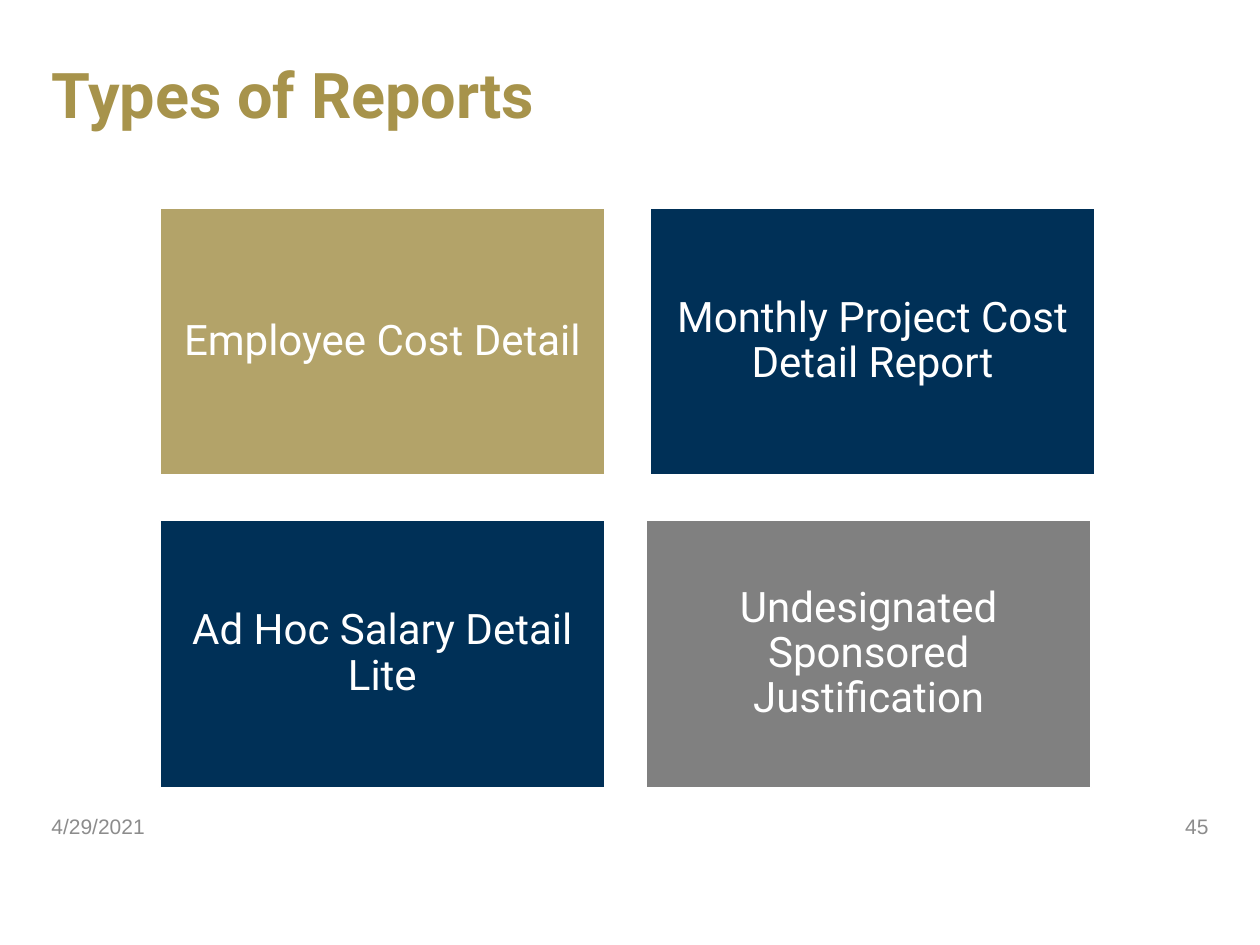
from dataclasses import dataclass

from pptx import Presentation
from pptx.dml.color import RGBColor
from pptx.enum.shapes import MSO_SHAPE
from pptx.enum.text import MSO_ANCHOR, PP_ALIGN
from pptx.util import Inches, Pt


@dataclass(frozen=True)
class Theme:
    title_gold: RGBColor = RGBColor.from_string("A7934B")
    gold: RGBColor = RGBColor.from_string("B3A369")
    navy: RGBColor = RGBColor.from_string("003057")
    gray: RGBColor = RGBColor.from_string("808080")
    footer_gray: RGBColor = RGBColor.from_string("8C8C8C")
    white: RGBColor = RGBColor.from_string("FFFFFF")
    heading_font: str = "Roboto"
    footer_font: str = "Arial"
    title_size: Pt = Pt(36)
    card_size: Pt = Pt(24)
    footer_size: Pt = Pt(12)


THEME = Theme()

CARDS = [
    ("Employee Cost Detail", THEME.gold, 0),
    ("Monthly Project Cost Detail Report", THEME.navy, 0),
    ("Ad Hoc Salary Detail Lite", THEME.navy, 0),
    ("Undesignated Sponsored Justification", THEME.gray, -0.03),
]


def write_text(shape, text, font_name, size, color, align, bold=False, spacing=1.0):
    frame = shape.text_frame
    frame.word_wrap = True
    frame.vertical_anchor = MSO_ANCHOR.MIDDLE
    para = frame.paragraphs[0]
    para.text = text
    para.alignment = align
    para.line_spacing = spacing
    para.font.name = font_name
    para.font.size = size
    para.font.bold = bold
    para.font.color.rgb = color


def add_title(page, box):
    title = page.shapes.title
    title.left, title.top, title.width, title.height = map(Inches, box)
    write_text(title, "Types of Reports", THEME.heading_font, THEME.title_size,
               THEME.title_gold, PP_ALIGN.LEFT, bold=True, spacing=0.9)


def add_card(page, box, text, color):
    card = page.shapes.add_shape(MSO_SHAPE.RECTANGLE, *map(Inches, box))
    card.shadow.inherit = False
    card.fill.solid()
    card.fill.fore_color.rgb = color
    card.line.color.rgb = THEME.white
    card.line.width = Pt(1)
    frame = card.text_frame
    frame.margin_left = frame.margin_right = Inches(0.1)
    frame.margin_top = frame.margin_bottom = Inches(0.1)
    write_text(card, text, THEME.heading_font, THEME.card_size,
               THEME.white, PP_ALIGN.CENTER, spacing=0.9)


def add_report_grid(page, box, columns=2, gap=0.36):
    left, top, width, height = box
    rows = len(CARDS) // columns
    card_width = (width - gap * (columns - 1)) / columns
    card_height = (height - gap * (rows - 1)) / rows
    for index, (text, color, shift) in enumerate(CARDS):
        row, column = divmod(index, columns)
        card_left = left + column * (card_width + gap) + shift
        card_top = top + row * (card_height + gap)
        add_card(page, (card_left, card_top, card_width, card_height), text, color)


def add_footer(page, box, item_width=2.25):
    left, top, width, height = box
    items = [
        ("4/29/2021", left, PP_ALIGN.LEFT),
        ("45", left + width - item_width, PP_ALIGN.RIGHT),
    ]
    for text, item_left, align in items:
        item = page.shapes.add_textbox(
            *map(Inches, (item_left, top, item_width, height)))
        write_text(item, text, THEME.footer_font, THEME.footer_size,
                   THEME.footer_gray, align)


def main():
    deck = Presentation()
    deck.slide_width, deck.slide_height = Inches(10), Inches(7.5)
    page = deck.slides.add_slide(deck.slide_layouts.get_by_name("Title Only"))
    add_title(page, (0.31, 0.22, 9.38, 1.11))
    add_footer(page, (0.31, 6.36, 9.38, 0.4))
    add_report_grid(page, (1.27, 1.65, 7.42, 4.6))
    deck.save("out.pptx")


if __name__ == "__main__":
    main()
